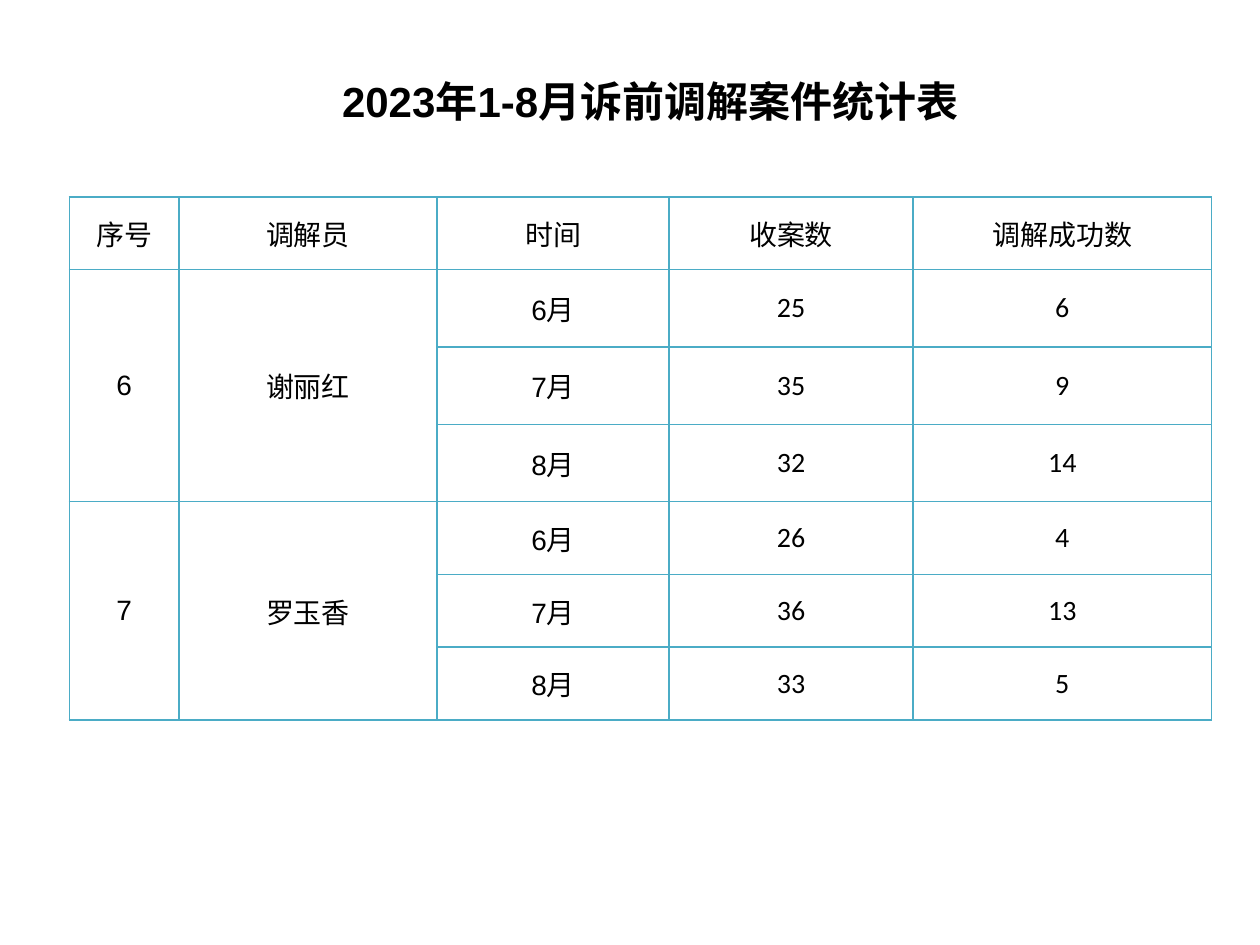
import pptx
import pptx.dml.color
import pptx.enum.text
import pptx.oxml.ns
import pptx.util
import lxml.etree

Pt = pptx.util.Pt
BLACK = pptx.dml.color.RGBColor(0x00, 0x00, 0x00)
BORDER = pptx.dml.color.RGBColor(0x4B, 0xAC, 0xC6)
CJK_FONT = "Noto Sans CJK SC"

HEADINGS = ["序号", "调解员", "时间", "收案数", "调解成功数"]
COLUMN_WIDTHS = [62.6, 147.6, 132.5, 139.5, 170.5]
HEADING_HEIGHT = 41.6
MEDIATORS = [
    ("6", "谢丽红", 44.2, [("6月", "25", "6"), ("7月", "35", "9"), ("8月", "32", "14")]),
    ("7", "罗玉香", 41.6, [("6月", "26", "4"), ("7月", "36", "13"), ("8月", "33", "5")]),
]


def add_text(frame, text, size, font_name, bold=False):
    """Write one centred run into the frame's first paragraph."""
    paragraph = frame.paragraphs[0]
    paragraph.alignment = pptx.enum.text.PP_ALIGN.CENTER
    run = paragraph.add_run()
    run.text = text
    run.font.size = Pt(size)
    run.font.bold = bold
    run.font.color.rgb = BLACK
    run.font.name = font_name
    east_asian = lxml.etree.SubElement(run.font._element, pptx.oxml.ns.qn("a:ea"))
    east_asian.set("typeface", CJK_FONT)


def add_borders(cell):
    """Draw a one-point line on each side of the cell."""
    properties = cell._tc.get_or_add_tcPr()
    for side in ("lnL", "lnR", "lnT", "lnB"):
        line = lxml.etree.SubElement(properties, pptx.oxml.ns.qn(f"a:{side}"), w=str(Pt(1)))
        fill = lxml.etree.SubElement(line, pptx.oxml.ns.qn("a:solidFill"))
        lxml.etree.SubElement(fill, pptx.oxml.ns.qn("a:srgbClr"), val=str(BORDER))


def style_cell(cell):
    """Give the cell its borders, no fill, no margins and middle anchoring."""
    add_borders(cell)
    cell.fill.background()
    cell.margin_left = cell.margin_right = cell.margin_top = cell.margin_bottom = Pt(0)
    cell.vertical_anchor = pptx.enum.text.MSO_ANCHOR.MIDDLE


def fill_cell(cell, text, font_name="Arial"):
    """Write a table entry."""
    add_text(cell.text_frame, text, 16, font_name)


def fill_mediator(table, top, number, mediator, height, months):
    """Fill the rows of one mediator, with number and name merged over them."""
    last = top + len(months) - 1
    for column, (text, font_name) in enumerate([(number, "Arial"), (mediator, CJK_FONT)]):
        table.cell(top, column).merge(table.cell(last, column))
        fill_cell(table.cell(top, column), text, font_name)
    for row, (month, received, settled) in enumerate(months, top):
        table.rows[row].height = Pt(height)
        fill_cell(table.cell(row, 2), month)
        fill_cell(table.cell(row, 3), received, "Calibri")
        fill_cell(table.cell(row, 4), settled, "Calibri")


def add_statistics(slide):
    """Add the table of cases by mediator and month."""
    row_count = 1 + sum(len(months) for *_, months in MEDIATORS)
    table = slide.shapes.add_table(
        row_count, len(HEADINGS), Pt(39.6), Pt(112.5), Pt(sum(COLUMN_WIDTHS)), Pt(299)
    ).table
    table.horz_banding = False
    table.first_row = False
    for column, width in zip(table.columns, COLUMN_WIDTHS):
        column.width = Pt(width)
    for cell in table.iter_cells():
        style_cell(cell)
    table.rows[0].height = Pt(HEADING_HEIGHT)
    for column, heading in enumerate(HEADINGS):
        fill_cell(table.cell(0, column), heading)
    top = 1
    for number, mediator, height, months in MEDIATORS:
        fill_mediator(table, top, number, mediator, height, months)
        top += len(months)


def add_title(slide):
    """Add the bold title above the table."""
    frame = slide.shapes.add_textbox(Pt(73.4), Pt(39.6), Pt(596.2), Pt(36)).text_frame
    frame.word_wrap = True
    frame.auto_size = pptx.enum.text.MSO_AUTO_SIZE.SHAPE_TO_FIT_TEXT
    add_text(frame, "2023年1-8月诉前调解案件统计表", 24, "Arial", bold=True)


def main():
    """Build the slide and save it."""
    presentation = pptx.Presentation()
    presentation.slide_width = Pt(720)
    presentation.slide_height = Pt(540)
    slide = presentation.slides.add_slide(presentation.slide_layouts[6])
    add_statistics(slide)
    add_title(slide)
    presentation.save("out.pptx")


if __name__ == "__main__":
    main()
